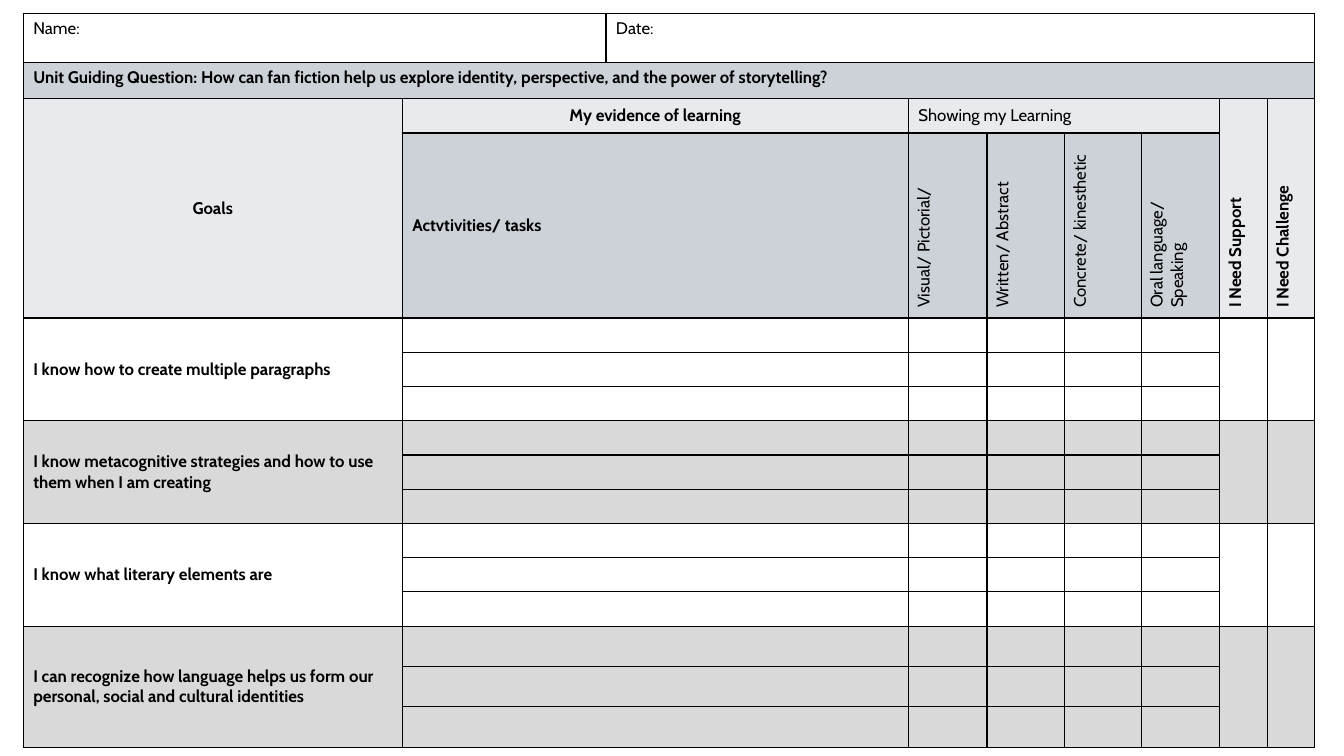
from dataclasses import dataclass
from lxml.etree import SubElement
from pptx import Presentation
from pptx.dml.color import RGBColor as RGB
from pptx.enum.text import MSO_ANCHOR as Anchor, PP_ALIGN as Align
from pptx.oxml.ns import qn
from pptx.table import Table, _Cell as Cell
from pptx.util import Inches, Pt

BLACK = RGB(0x00, 0x00, 0x00)
WHITE = RGB(0xFF, 0xFF, 0xFF)
GREY = RGB(0xD9, 0xD9, 0xD9)
PALE = RGB(0xE8, 0xEA, 0xED)
STEEL = RGB(0xCC, 0xD2, 0xD8)
FONT, SIZE = "Cabin", Pt(12)

# Grid of the form, in inches
COLS = [3.76, 2.02, 3, 0.78, 0.77, 0.76, 0.78, 0.47, 0.47]
HEAD = [0.49, 0.36, 0.34, 1.61]
BODY = [0.34] * 9 + [0.4] * 3
ROWS = HEAD + BODY
STEP = 3  # rows per goal
LEFT, TOP = 0.23, 0.13


@dataclass
class Box:
    row: int
    col: int
    text: str = ""
    fill: RGB = WHITE
    high: int = 1
    wide: int = 1
    bold: bool = False
    mid: bool = True
    align: Align | None = None
    turn: bool = False


HEADS = [
    Box(0, 0, "Name:", wide=2, mid=False),
    Box(0, 2, "Date:", wide=7, mid=False),
    Box(1, 0, "Unit Guiding Question: How can fan fiction help us explore identity, "
        "perspective, and the power of storytelling?", STEEL, wide=9, bold=True, mid=False),
    Box(2, 0, "Goals", PALE, high=2, bold=True, align=Align.CENTER),
    Box(2, 1, "My evidence of learning", PALE, wide=2, bold=True, align=Align.CENTER),
    Box(2, 3, "Showing my Learning", PALE, wide=4),
    Box(2, 7, "I Need Support", PALE, high=2, bold=True, turn=True),
    Box(2, 8, "I Need Challenge", PALE, high=2, bold=True, turn=True),
    Box(3, 1, "Actvtivities/ tasks", STEEL, wide=2, bold=True),
]
MODES = ["Visual/ Pictorial/", "Written/ Abstract", "Concrete/ kinesthetic",
         "Oral language/ Speaking"]
GOALS = [
    "I know how to create multiple paragraphs",
    "I know metacognitive strategies and how to use them when I am creating",
    "I know what literary elements are",
    "I can recognize how language helps us form our personal, social and cultural identities",
]


def goal_boxes(num: int, text: str) -> list[Box]:
    """Cells for one goal: its name, its task rows and its two need columns."""
    top = len(HEAD) + num * STEP
    fill = GREY if num % 2 else WHITE
    boxes = [Box(top, 0, text, fill, high=STEP, bold=True)]
    boxes += [Box(top, col, fill=fill, high=STEP) for col in (7, 8)]
    for row in range(top, top + STEP):
        boxes.append(Box(row, 1, fill=fill, wide=2))
        boxes += [Box(row, col, fill=fill) for col in range(3, 7)]
    return boxes


def style_cell(cell: Cell, fill: RGB) -> None:
    """Black rules on all sides, a plain fill and the form's text size."""
    props = cell._tc.get_or_add_tcPr()
    for side in ("a:lnL", "a:lnR", "a:lnT", "a:lnB"):
        line = SubElement(props, qn(side), w=str(Pt(1)))
        paint = SubElement(line, qn("a:solidFill"))
        SubElement(paint, qn("a:srgbClr"), val=str(BLACK))
    cell.fill.solid()
    cell.fill.fore_color.rgb = fill
    end = SubElement(cell.text_frame.paragraphs[0]._p, qn("a:endParaRPr"), sz="1200")
    SubElement(end, qn("a:latin"), typeface=FONT)


def draw_box(table: Table, box: Box) -> None:
    for row in range(box.row, box.row + box.high):
        for col in range(box.col, box.col + box.wide):
            style_cell(table.cell(row, col), box.fill)
    cell = table.cell(box.row, box.col)
    if box.high * box.wide > 1:
        cell.merge(table.cell(box.row + box.high - 1, box.col + box.wide - 1))
    if box.mid:
        cell.vertical_anchor = Anchor.MIDDLE
    if box.turn:
        cell._tc.get_or_add_tcPr().set("vert", "vert270")
    if not box.text:
        return
    para = cell.text_frame.paragraphs[0]
    para.text = box.text
    para.alignment = box.align
    for run in para.runs:
        font = run.font
        font.name, font.size, font.bold = FONT, SIZE, box.bold
        font.color.rgb = BLACK


def main() -> None:
    deck = Presentation()
    deck.slide_width, deck.slide_height = Inches(13.33), Inches(7.5)
    slide = deck.slides.add_slide(deck.slide_layouts[6])

    # Empty table on the grid
    frame = slide.shapes.add_table(len(ROWS), len(COLS), Inches(LEFT), Inches(TOP),
                                   Inches(sum(COLS)), Inches(sum(ROWS)))
    table = frame.table
    table.first_row = table.horz_banding = False
    for col, wide in zip(table.columns, COLS):
        col.width = Inches(wide)
    for row, high in zip(table.rows, ROWS):
        row.height = Inches(high)

    # Headings, learning modes and goals
    boxes = HEADS + [Box(3, 3 + num, text, STEEL, turn=True) for num, text in enumerate(MODES)]
    for num, text in enumerate(GOALS):
        boxes += goal_boxes(num, text)
    for box in boxes:
        draw_box(table, box)

    deck.save("out.pptx")


if __name__ == "__main__":
    main()
